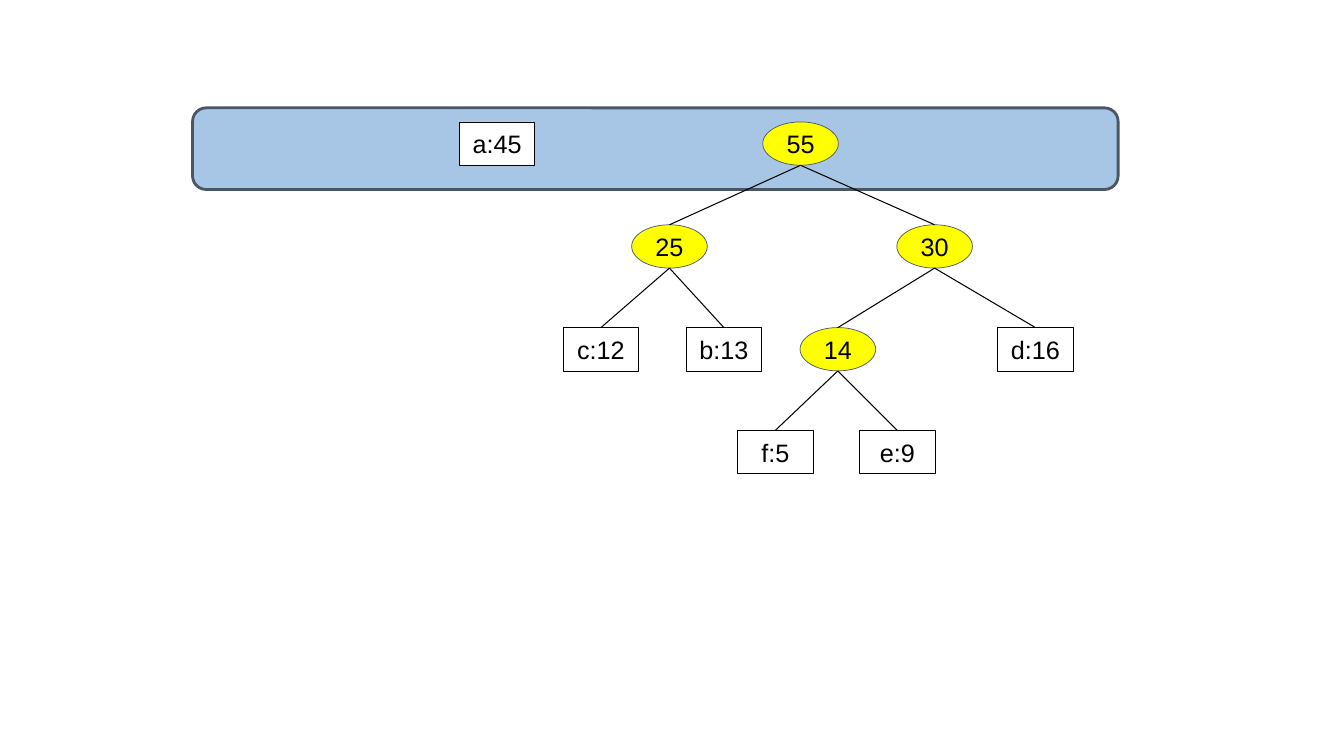
from lxml import etree
from pptx import Presentation
from pptx.dml.color import RGBColor
from pptx.enum.shapes import MSO_CONNECTOR, MSO_SHAPE
from pptx.enum.text import MSO_ANCHOR, PP_ALIGN
from pptx.oxml.ns import qn
from pptx.util import Inches, Pt

RECTANGLE, OVAL = MSO_SHAPE.RECTANGLE, MSO_SHAPE.OVAL
ROUNDED = MSO_SHAPE.ROUNDED_RECTANGLE
STRAIGHT = MSO_CONNECTOR.STRAIGHT
MIDDLE, CENTER = MSO_ANCHOR.MIDDLE, PP_ALIGN.CENTER

# Content: label, centre across, tree level; a parent is joined to its children
NODES = [
    ("a:45", 4.93, 0), ("55", 7.94, 0),
    ("25", 6.64, 1), ("30", 9.27, 1),
    ("c:12", 5.96, 2), ("b:13", 7.18, 2), ("14", 8.31, 2), ("d:16", 10.27, 2),
    ("f:5", 7.69, 3), ("e:9", 8.9, 3),
]
CHILDREN = {
    "55": ("25", "30"),
    "25": ("c:12", "b:13"),
    "30": ("14", "d:16"),
    "14": ("f:5", "e:9"),
}

# Layout in inches
SLIDE_WIDTH, SLIDE_HEIGHT = 13.33, 7.5
QUEUE = (1.91, 1.07, 9.18, 0.81)
NODE_WIDTH, NODE_HEIGHT = 0.75, 0.43
FIRST_TOP, LEVEL_STEP = 1.21, 1.02

BLACK, WHITE, YELLOW = "000000", "FFFFFF", "FFFF00"
SLATE, LIGHT_BLUE = "495764", "A7C6E5"


def color(value):
    return RGBColor.from_string(value)


def add_box(page, kind, bounds, fill, line, weight):
    box = page.shapes.add_shape(kind, *map(Inches, bounds))
    box.shadow.inherit = False
    box.fill.solid()
    box.fill.fore_color.rgb = color(fill)
    box.line.color.rgb = color(line)
    box.line.width = Pt(weight)
    return box


def write(box, text, size=18, font="Arial", ink=BLACK):
    frame = box.text_frame
    frame.margin_left = frame.margin_right = 0
    frame.margin_top = frame.margin_bottom = 0
    frame.vertical_anchor = MIDDLE
    para = frame.paragraphs[0]
    para.alignment = CENTER
    span = para.add_run()
    span.text = text
    span.font.size, span.font.name = Pt(size), font
    span.font.color.rgb = color(ink)


def add_branch(page, start, end):
    branch = page.shapes.add_connector(STRAIGHT, *map(Inches, start + end))
    branch.line.color.rgb = color(BLACK)
    branch.line.width = Pt(0.75)
    etree.SubElement(branch._element.spPr, qn("a:effectLst"))


def main():
    deck = Presentation()
    deck.slide_width, deck.slide_height = Inches(SLIDE_WIDTH), Inches(SLIDE_HEIGHT)
    page = deck.slides.add_slide(deck.slide_layouts[6])

    # Queue band behind the roots
    add_box(page, ROUNDED, QUEUE, LIGHT_BLUE, SLATE, 2)

    # Leaves are boxes, merged nodes are ovals
    places = {}
    for label, center, level in NODES:
        top = FIRST_TOP + level * LEVEL_STEP
        places[label] = (center, top)
        bounds = (center - NODE_WIDTH / 2, top, NODE_WIDTH, NODE_HEIGHT)
        if label in CHILDREN:
            node = add_box(page, OVAL, bounds, YELLOW, SLATE, 0.5)
        else:
            node = add_box(page, RECTANGLE, bounds, WHITE, BLACK, 0.5)
        write(node, label)

    # Branches run from the top of a child to the bottom of its parent
    for parent, children in CHILDREN.items():
        center, top = places[parent]
        for child in children:
            add_branch(page, places[child], (center, top + NODE_HEIGHT))

    deck.save("out.pptx")


if __name__ == "__main__":
    main()
